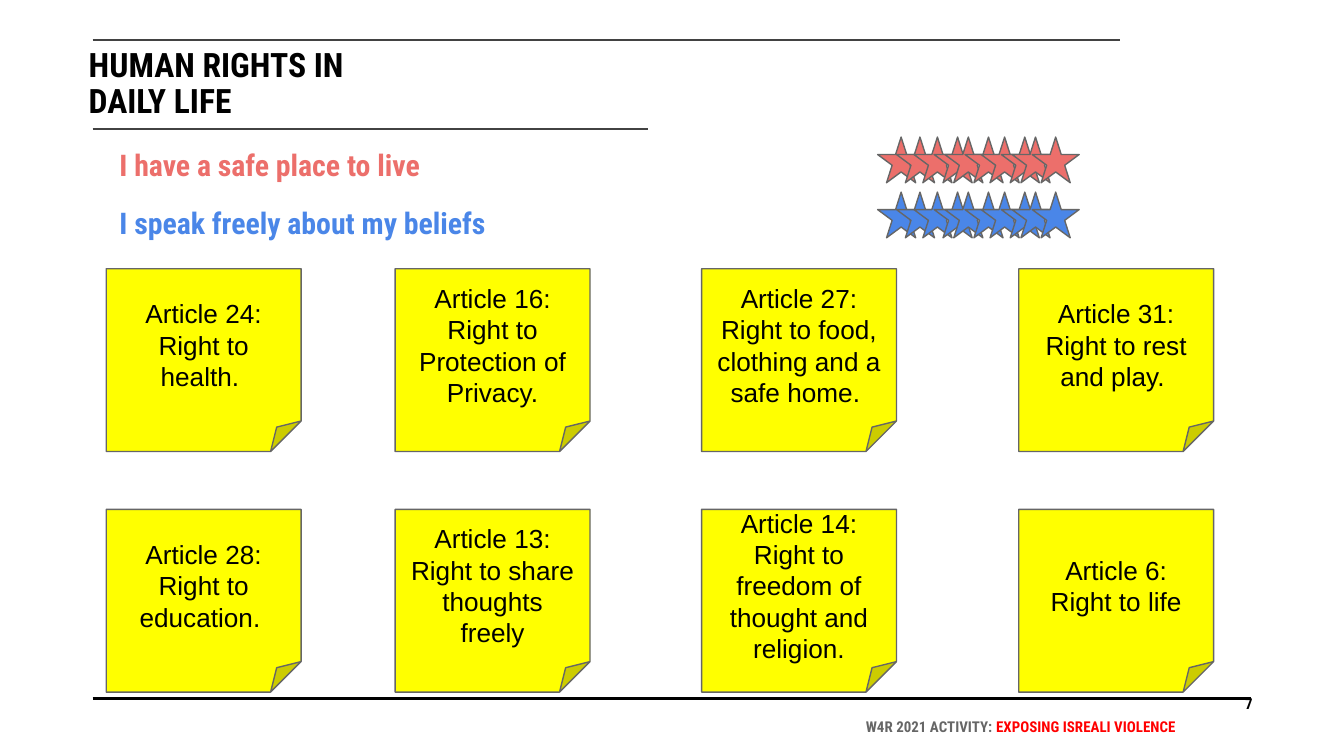
import pptx
import pptx.dml.color
import pptx.enum.shapes
import pptx.enum.text
import pptx.oxml.ns
import pptx.util
from lxml import etree

Inches = pptx.util.Inches
Pt = pptx.util.Pt
ALIGN = pptx.enum.text.PP_ALIGN
ANCHOR = pptx.enum.text.MSO_ANCHOR
SHAPE = pptx.enum.shapes.MSO_SHAPE

COLORS = {
    "black": "000000",
    "rule": "424242",
    "outline": "666666",
    "note": "FFFF00",
    "coral": "EC6F6B",
    "blue": "4A86E8",
    "red": "FF0000",
}
HEADING_FONT = "Roboto Condensed"
NOTE_FONT = "Arial"

STATEMENTS = [
    ("I have a safe place to live", "coral"),
    ("I speak freely about my beliefs", "blue"),
]
ARTICLES = [
    [
        "Article 24: Right to health. ",
        "Article 16: Right to Protection of Privacy.",
        "Article 27: Right to food, clothing and a safe home. ",
        "Article 31: Right to rest and play. ",
    ],
    [
        "Article 28: Right to education. ",
        "Article 13: Right to share thoughts freely",
        "Article 14: Right to freedom of thought and religion.",
        "Article 6: Right to life",
    ],
]
NOTE_COLUMNS = [0, 2.15, 4.43, 6.79]
NOTE_ROW_STEP = 1.79
STAR_OFFSETS = [0, 0.14, 0.27, 0.42, 0.5, 0.65, 0.77, 0.92, 1, 1.15]
STAR_ROW_STEP = 0.41


def color(name):
    return pptx.dml.color.RGBColor.from_string(COLORS[name])


def write_text(shape, paragraphs, font=HEADING_FONT, size=8, bold=True,
               align=ALIGN.LEFT, anchor=ANCHOR.TOP, insets=(0, 0),
               line_spacing=None, gap=0):
    """Fill a shape; each paragraph is a list of (text, color name) runs."""
    frame = shape.text_frame
    frame.word_wrap = True
    frame.vertical_anchor = anchor
    frame.margin_left = frame.margin_right = Inches(insets[0])
    frame.margin_top = frame.margin_bottom = Inches(insets[1])
    for index, runs in enumerate(paragraphs):
        paragraph = frame.add_paragraph() if index else frame.paragraphs[0]
        paragraph.alignment = align
        paragraph.line_spacing = line_spacing
        if index and gap:
            paragraph.space_before = Pt(gap)
        paragraph.font.size = Pt(size)
        for text, color_name in runs:
            for part_number, part in enumerate(text.split("\n")):
                if part_number:
                    paragraph.add_line_break()
                run = paragraph.add_run()
                run.text = part
                run.font.name = font
                run.font.size = Pt(size)
                run.font.bold = bold
                run.font.color.rgb = color(color_name)


def add_text(slide, left, top, width, height, paragraphs, **text_format):
    box = slide.shapes.add_textbox(
        Inches(left), Inches(top), Inches(width), Inches(height))
    write_text(box, paragraphs, **text_format)


def add_rule(slide, left, top, width, color_name, weight):
    rule = slide.shapes.add_connector(
        pptx.enum.shapes.MSO_CONNECTOR.STRAIGHT,
        Inches(left), Inches(top), Inches(left + width), Inches(top))
    rule.line.color.rgb = color(color_name)
    rule.line.width = Pt(weight)
    etree.SubElement(rule._element.spPr, pptx.oxml.ns.qn("a:effectLst"))


def add_outlined_shape(slide, kind, left, top, width, height, fill):
    shape = slide.shapes.add_shape(
        kind, Inches(left), Inches(top), Inches(width), Inches(height))
    shape.shadow.inherit = False
    shape.fill.solid()
    shape.fill.fore_color.rgb = color(fill)
    shape.line.color.rgb = color("outline")
    shape.line.width = Pt(0.75)
    return shape


def add_header(slide, left, top, width):
    add_rule(slide, left, top, width, "rule", 1)
    add_rule(slide, left, top + 0.66, 4.13, "rule", 1)
    add_text(slide, left - 0.1, top + 0.06, 3.39, 0.52,
             [[("HUMAN RIGHTS IN \nDAILY LIFE", "black")]],
             size=18, insets=(0.07, 0), line_spacing=0.9)


def add_statements(slide, left, top, width, height):
    add_text(slide, left, top, width, height,
             [[statement] for statement in STATEMENTS],
             size=16, insets=(0.1, 0.1), gap=12)


def add_star_rows(slide, left, top):
    """Place one row of overlapping stars for each statement."""
    for row, (_, color_name) in enumerate(STATEMENTS):
        for offset in STAR_OFFSETS:
            add_outlined_shape(slide, SHAPE.STAR_5_POINT, left + offset,
                               top + row * STAR_ROW_STEP, 0.35, 0.34, color_name)


def add_article_notes(slide, left, top):
    for row, articles in enumerate(ARTICLES):
        for column, article in zip(NOTE_COLUMNS, articles):
            note = add_outlined_shape(slide, SHAPE.FOLDED_CORNER, left + column,
                                      top + row * NOTE_ROW_STEP, 1.45, 1.36, "note")
            write_text(note, [[(article, "black")]], font=NOTE_FONT, size=14,
                       bold=False, align=ALIGN.CENTER, anchor=ANCHOR.MIDDLE,
                       insets=(0.1, 0.1))


def add_footer(slide, left, top, width):
    add_rule(slide, left, top, width, "black", 1.5)
    small_print = {"align": ALIGN.RIGHT, "anchor": ANCHOR.BOTTOM}
    add_text(slide, left + width - 0.49, top - 0.01, 0.5, 0.11,
             [[("7", "black")]], **small_print)
    add_text(slide, left + 5.03, top + 0.1, 3.03, 0.17,
             [[("W4R 2021 ACTIVITY: ", "outline"),
               ("EXPOSING ISREALI VIOLENCE", "red")]], **small_print)


def main():
    presentation = pptx.Presentation()
    presentation.slide_width = Inches(10)
    presentation.slide_height = presentation.slide_width * 9 // 16
    slide = presentation.slides.add_slide(presentation.slide_layouts[6])
    add_header(slide, 0.69, 0.3, 7.64)
    add_footer(slide, 0.69, 5.2, 8.62)
    add_article_notes(slide, 0.79, 2)
    add_statements(slide, 0.79, 0.99, 6.01, 0.91)
    add_star_rows(slide, 6.53, 1.02)
    presentation.save("out.pptx")


if __name__ == "__main__":
    main()
